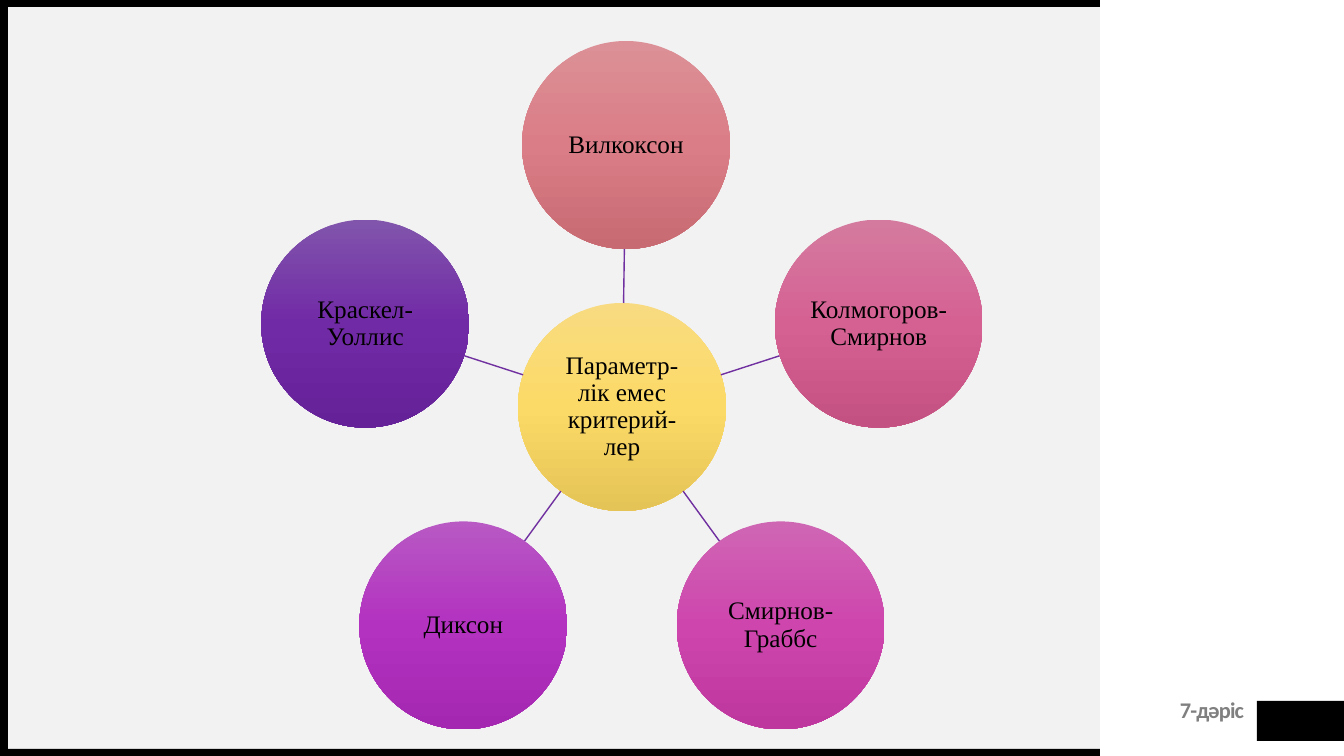
from copy import deepcopy
from math import cos, hypot, radians, sin

from lxml.etree import SubElement
from pptx import Presentation
from pptx.dml.color import RGBColor
from pptx.enum.shapes import MSO_CONNECTOR, MSO_SHAPE
from pptx.enum.text import MSO_ANCHOR as ANCHOR, MSO_AUTO_SIZE as AUTO, PP_ALIGN as ALIGN
from pptx.oxml.ns import qn
from pptx.util import Pt

PX = 914400 / 100.8
WIDTH, HEIGHT = 1344, 756

COLORS = {"panel": "F2F2F2", "bar": "000000", "line": "7030A0",
          "text": "000000", "footer": "808080"}

# color, left, top, width, height
BLOCKS = [
    ("panel", 8, 7, 1092, 742),
    ("bar", 1257, 701, 87, 40),
    ("bar", 0, 749, 1100, 7),
    ("bar", 0, 0, 1100, 7),
    ("bar", 0, 0, 8, 756),
]
FOOTER = ("7-дәріс", 1061, 699, 183, 24)

HUB = ("Параметр-лік емес критерий-лер", ("F8DB81", "FCDA67", "E5C457"))
# text, gradient, shift from the regular place on the ring
CRITERIA = [
    ("Вилкоксон", ("DC9097", "DB7D86", "C86A72"), (4, 8)),
    ("Колмогоров-Смирнов", ("D57A9F", "D56193", "C35181"), (0, 0)),
    ("Смирнов-Граббс", ("CF66B4", "CE46AD", "BE379E"), (0, 0)),
    ("Диксон", ("B859C4", "B332C0", "A327B0"), (0, 0)),
    ("Краскел-Уоллис", ("8155AC", "712AA6", "652198"), (0, 0)),
]
HUB_X, HUB_Y = 622, 407
RADIUS, RING = 104, 270

CIRCLE_FONT = {"name": "Times New Roman", "size": Pt(18)}
FOOTER_FONT = {"name": "Calibri", "size": Pt(16), "bold": True}
CIRCLE_FRAME = {"word_wrap": True, "vertical_anchor": ANCHOR.MIDDLE}
FOOTER_FRAME = {"word_wrap": True, "auto_size": AUTO.SHAPE_TO_FIT_TEXT}
CIRCLE_PARA = {"alignment": ALIGN.CENTER, "line_spacing": 0.9}
FOOTER_PARA = {"alignment": ALIGN.RIGHT, "line_spacing": Pt(14)}


def emu(*lengths):
    return [round(v * PX) for v in lengths]


def set_all(obj, values):
    for name, value in values.items():
        setattr(obj, name, value)


def write(sp, text, color, insets, frame, para, font):
    """Fill the text frame; insets are left, top, right, bottom in px."""
    tf = sp.text_frame
    sides = ("margin_left", "margin_top", "margin_right", "margin_bottom")
    set_all(tf, dict(zip(sides, emu(*insets))))
    set_all(tf, frame)
    p = tf.paragraphs[0]
    set_all(p, para)
    r = p.add_run()
    r.text = text
    set_all(r.font, font)
    r.font.color.rgb = RGBColor.from_string(COLORS[color])
    return r


def add_plain(s, kind, box):
    sp = s.shapes.add_shape(kind, *emu(*box))
    sp.shadow.inherit = False
    sp.line.fill.background()
    return sp


def add_circle(s, text, gradient, x, y):
    box = (x - RADIUS, y - RADIUS, 2 * RADIUS, 2 * RADIUS)
    sp = add_plain(s, MSO_SHAPE.OVAL, box)
    sp.fill.gradient()
    sp.fill.gradient_angle = 270
    stops = sp._element.spPr.find(".//" + qn("a:gsLst"))
    stops.insert(1, deepcopy(stops[0]))
    for i, (stop, color) in enumerate(zip(sp.fill.gradient_stops, gradient)):
        stop.position = i / 2
        stop.color.rgb = RGBColor.from_string(color)
    write(sp, text, "text", (4, 1, 4, 1), CIRCLE_FRAME, CIRCLE_PARA, CIRCLE_FONT)


def add_spoke(s, x, y):
    """Line from the rim of the hub to the rim of the circle at x, y."""
    dx, dy = x - HUB_X, y - HUB_Y
    k = RADIUS / hypot(dx, dy)
    ends = (HUB_X + k * dx, HUB_Y + k * dy, x - k * dx, y - k * dy)
    line = s.shapes.add_connector(MSO_CONNECTOR.STRAIGHT, *emu(*ends))
    line.line.width = Pt(1)
    line.line.color.rgb = RGBColor.from_string(COLORS["line"])
    SubElement(line._element.spPr, qn("a:effectLst"))


def main():
    prs = Presentation()
    prs.slide_width, prs.slide_height = emu(WIDTH, HEIGHT)
    s = prs.slides.add_slide(prs.slide_layouts[6])

    for color, *box in BLOCKS:
        sp = add_plain(s, MSO_SHAPE.RECTANGLE, box)
        sp.fill.solid()
        sp.fill.fore_color.rgb = RGBColor.from_string(COLORS[color])

    text, *box = FOOTER
    footer = s.shapes.add_textbox(*emu(*box))
    r = write(footer, text, "footer", (0, 4, 0, 0), FOOTER_FRAME, FOOTER_PARA, FOOTER_FONT)
    r.font._element.set("spc", "-60")

    add_circle(s, *HUB, HUB_X, HUB_Y)
    for i, (text, gradient, (shift_x, shift_y)) in enumerate(CRITERIA):
        angle = radians(360 / len(CRITERIA) * i - 90)
        x = HUB_X + RING * cos(angle) + shift_x
        y = HUB_Y + RING * sin(angle) + shift_y
        add_spoke(s, x, y)
        add_circle(s, text, gradient, x, y)

    prs.save("out.pptx")


if __name__ == "__main__":
    main()
